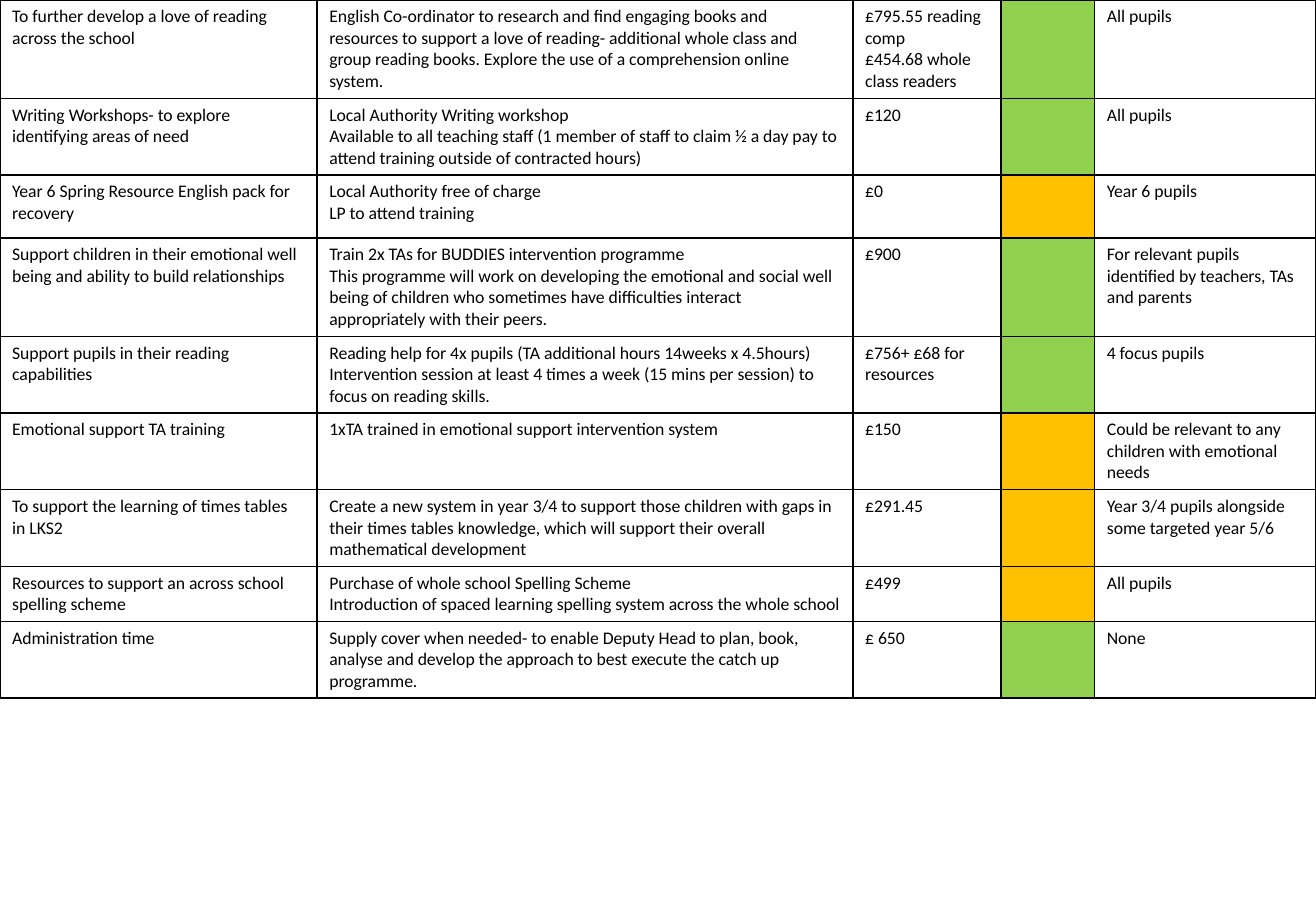
from lxml import etree
from pptx import Presentation
from pptx.dml.color import RGBColor
from pptx.oxml.ns import qn
from pptx.util import Inches, Pt

BLANK_LAYOUT = 6
FONT = "Calibri"
FONT_SIZE = 10.5
BORDER_POINTS = 1
STATUS_COLUMN = 3
COLORS = {"text": "000000", "border": "000000", "done": "92D050", "ongoing": "FFC000"}
COLUMN_WIDTHS = [2.61, 4.41, 1.22, 0.77, 1.82]
ROW_HEIGHTS = [0.81, 0.63, 0.52, 0.81, 0.63, 0.63, 0.63, 0.45, 0.63]

# Aim, action, cost, status, pupils
ACTIONS = [
    ("To further develop a love of reading across the school",
     "English Co-ordinator to research and find engaging books and resources to support a love of "
     "reading- additional whole class and group reading books. Explore the use of a "
     "comprehension online system.",
     "£795.55 reading comp\n£454.68 whole class readers", "done", "All pupils"),
    ("Writing Workshops- to explore identifying areas of need",
     "Local Authority Writing workshop\nAvailable to all teaching staff (1 member of staff to claim "
     "½ a day pay to attend training outside of contracted hours)",
     "£120", "done", "All pupils"),
    ("Year 6 Spring Resource English pack for recovery",
     "Local Authority free of charge\nLP to attend training",
     "£0", "ongoing", "Year 6 pupils"),
    ("Support children in their emotional well being and ability to build relationships",
     "Train 2x TAs for BUDDIES intervention programme\nThis programme will work on developing the "
     "emotional and social well being of children who sometimes have difficulties interact "
     "appropriately with their peers.",
     "£900", "done", "For relevant pupils identified by teachers, TAs and parents"),
    ("Support pupils in their reading capabilities",
     "Reading help for 4x pupils (TA additional hours 14weeks x 4.5hours)\nIntervention session at "
     "least 4 times a week (15 mins per session) to focus on reading skills.",
     "£756+ £68 for resources", "done", "4 focus pupils"),
    ("Emotional support TA training",
     "1xTA trained in emotional support intervention system",
     "£150", "ongoing", "Could be relevant to any children with emotional needs"),
    ("To support the learning of times tables in LKS2",
     "Create a new system in year 3/4 to support those children with gaps in their times tables "
     "knowledge, which will support their overall mathematical development",
     "£291.45", "ongoing", "Year 3/4 pupils alongside some targeted year 5/6"),
    ("Resources to support an across school spelling scheme",
     "Purchase of whole school Spelling Scheme\nIntroduction of spaced learning spelling system "
     "across the whole school",
     "£499", "ongoing", "All pupils"),
    ("Administration time",
     "Supply cover when needed- to enable Deputy Head to plan, book, analyse and develop the "
     "approach to best execute the catch up programme.",
     "£ 650", "done", "None"),
]


def add_borders(cell):
    properties = cell._tc.get_or_add_tcPr()
    for side in ("a:lnL", "a:lnR", "a:lnT", "a:lnB"):
        line = etree.SubElement(properties, qn(side), w=str(Pt(BORDER_POINTS)))
        fill = etree.SubElement(line, qn("a:solidFill"))
        etree.SubElement(fill, qn("a:srgbClr"), val=COLORS["border"])


def write_text(cell, text, size=FONT_SIZE, color="text"):
    """Write each line of the text as its own paragraph."""
    cell.text_frame.text = text
    for para in cell.text_frame.paragraphs:
        para.font.name = FONT
        para.font.size = Pt(size)
        para.font.bold = False
        para.font.color.rgb = RGBColor.from_string(COLORS[color])


def fill_status(cell, status):
    cell.fill.solid()
    cell.fill.fore_color.rgb = RGBColor.from_string(COLORS[status])


def add_action_table(page):
    frame = page.shapes.add_table(
        len(ACTIONS), len(COLUMN_WIDTHS), Inches(0), Inches(0),
        Inches(sum(COLUMN_WIDTHS)), Inches(sum(ROW_HEIGHTS)))
    table = frame.table
    table.first_row = False
    table.horz_banding = False
    for column, width in zip(table.columns, COLUMN_WIDTHS):
        column.width = Inches(width)
    for row, height, action in zip(table.rows, ROW_HEIGHTS, ACTIONS):
        row.height = Inches(height)
        for index, (cell, value) in enumerate(zip(row.cells, action)):
            add_borders(cell)
            if index == STATUS_COLUMN:
                fill_status(cell, value)
            else:
                cell.fill.background()
                write_text(cell, value)


def main():
    deck = Presentation()
    deck.slide_width = Inches(10.83)
    deck.slide_height = Inches(7.5)
    page = deck.slides.add_slide(deck.slide_layouts[BLANK_LAYOUT])
    add_action_table(page)
    deck.save("out.pptx")


if __name__ == "__main__":
    main()
